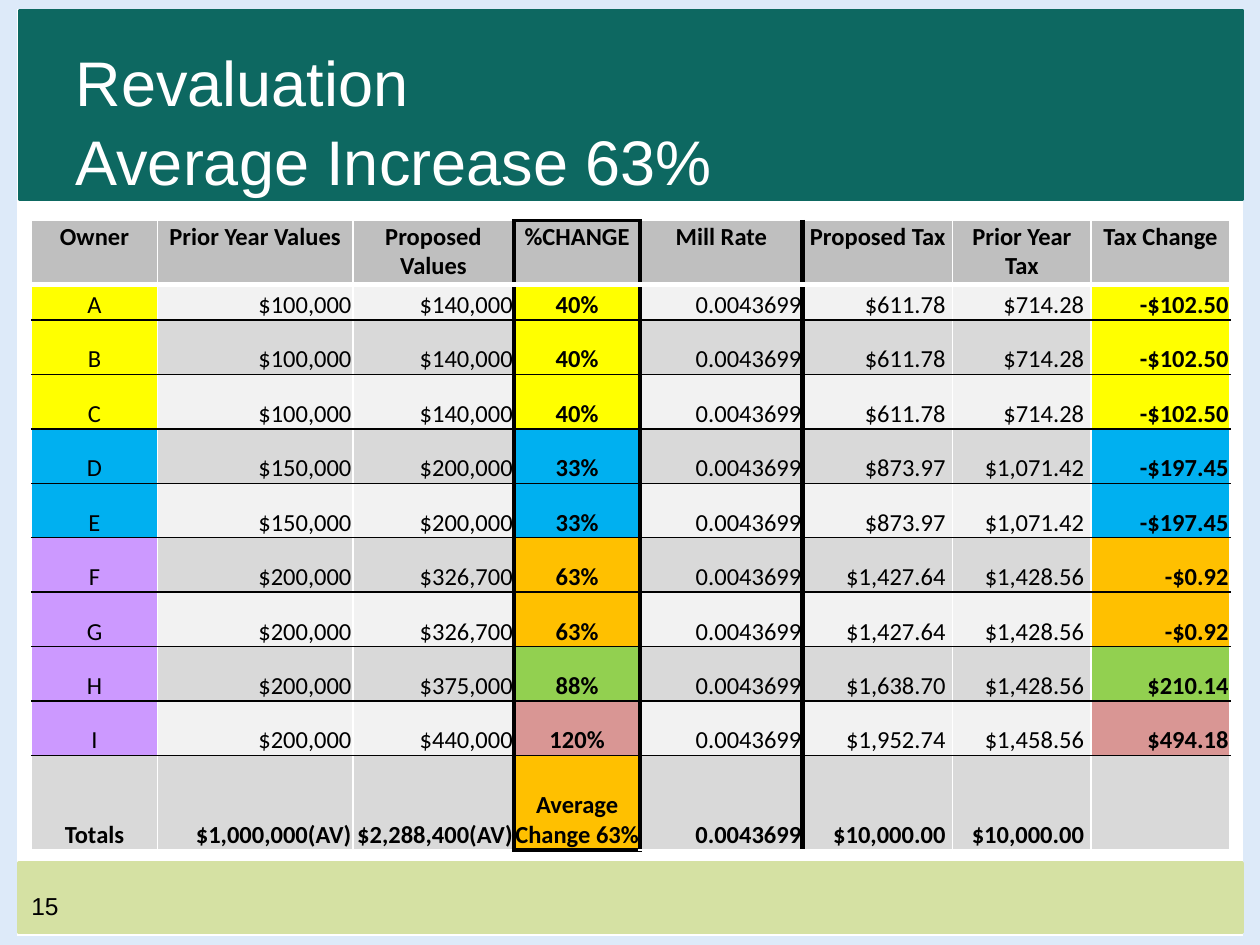
import pptx
import pptx.util
import pptx.dml.color
import pptx.enum.shapes
import pptx.enum.text
from lxml import etree

Pt = pptx.util.Pt
Align = pptx.enum.text.PP_ALIGN
Anchor = pptx.enum.text.MSO_ANCHOR

HUES = {
    "frame": "DDEAF9", "foot": "D5E1A3", "banner": "0D6861",
    "white": "FFFFFF", "black": "000000", "head": "BFBFBF",
    "light": "F2F2F2", "dark": "D9D9D9", "yellow": "FFFF00",
    "blue": "00B0F0", "purple": "CC99FF", "orange": "FFC000",
    "green": "92D050", "rose": "D99694",
}
TITLE = "Revaluation\vAverage Increase 63%"
PAGE = "15"
BANDS = [
    ("frame", 0, 0, 720, 4.3),
    ("frame", 0.4, 4, 8.6, 533.5),
    ("frame", 711, 2, 8.6, 533.5),
    ("frame", 0, 535.7, 720, 4.3),
    ("foot", 10.8, 493.2, 699.1, 39.6),
    ("banner", 11.5, 6, 698.4, 108),
]
HEADS = ["Owner", "Prior Year Values", "Proposed Values", "%CHANGE",
         "Mill Rate", "Proposed Tax", "Prior Year Tax", "Tax Change"]
RATE = "0.0043699"
OWNERS = [
    ("A", "$100,000", "$140,000", "40%", RATE, "$611.78", "$714.28", "-$102.50"),
    ("B", "$100,000", "$140,000", "40%", RATE, "$611.78", "$714.28", "-$102.50"),
    ("C", "$100,000", "$140,000", "40%", RATE, "$611.78", "$714.28", "-$102.50"),
    ("D", "$150,000", "$200,000", "33%", RATE, "$873.97", "$1,071.42", "-$197.45"),
    ("E", "$150,000", "$200,000", "33%", RATE, "$873.97", "$1,071.42", "-$197.45"),
    ("F", "$200,000", "$326,700", "63%", RATE, "$1,427.64", "$1,428.56", "-$0.92"),
    ("G", "$200,000", "$326,700", "63%", RATE, "$1,427.64", "$1,428.56", "-$0.92"),
    ("H", "$200,000", "$375,000", "88%", RATE, "$1,638.70", "$1,428.56", "$210.14"),
    ("I", "$200,000", "$440,000", "120%", RATE, "$1,952.74", "$1,458.56", "$494.18"),
]
TOTALS = ("Totals", "$1,000,000(AV)", "$2,288,400(AV)", "Average Change 63%",
          RATE, "$10,000.00", "$10,000.00", "")
ROWS = [HEADS, *OWNERS, TOTALS]
WIDTHS = [72, 111.6, 92.2, 72, 92.9, 85.7, 79.2, 79.2]
HEIGHTS = [36.7, 20.2] + [31.1] * 8 + [54]
CLASSES = {"A": "yellow", "B": "yellow", "C": "yellow", "D": "blue", "E": "blue"}
CHANGES = {"40%": "yellow", "33%": "blue", "63%": "orange", "88%": "green", "120%": "rose"}
OWNER, CHANGE, DIFF = 0, 3, 7
TAXES = (5, 6)
THICK = (3, 4, 5)
LAST = len(ROWS) - 1


def color(name):
    return pptx.dml.color.RGBColor.from_string(HUES[name])


def style(frame, font, size, hue, bold=False):
    for para in frame.paragraphs:
        for run in para.runs:
            run.font.name = font
            run.font.size = Pt(size)
            run.font.bold = bold
            run.font.color.rgb = color(hue)


def add(parent, tag, **attrs):
    return etree.SubElement(parent, pptx.oxml.ns.qn(tag), attrs)


def tint(row, col):
    if row == 0:
        return "head"
    data = ROWS[row]
    if row == LAST:
        return "orange" if col == CHANGE else "dark"
    if col == OWNER:
        return CLASSES.get(data[OWNER], "purple")
    if col in (CHANGE, DIFF):
        return CHANGES[data[CHANGE]]
    return "light" if row % 2 else "dark"


def upright(edge):
    return ("black", 3) if edge in THICK else ("white", 1)


def level(edge, col):
    if edge == 0:
        return ("black", 2.25) if col == CHANGE else ("white", 1)
    if edge == 1:
        return ("white", 3)
    if edge > LAST:
        return ("black", 3) if col == CHANGE else ("white", 1)
    return ("black", 1)


def border(cell, row, col):
    props = cell._tc.get_or_add_tcPr()
    sides = [("a:lnL", upright(col)), ("a:lnR", upright(col + 1)),
             ("a:lnT", level(row, col)), ("a:lnB", level(row + 1, col))]
    for tag, (hue, width) in sides:
        line = add(props, tag, w=str(int(Pt(width))))
        add(add(line, "a:solidFill"), "a:srgbClr", val=HUES[hue])


def fill_cell(cell, row, col, text):
    border(cell, row, col)
    cell.fill.solid()
    cell.fill.fore_color.rgb = color(tint(row, col))
    cell.margin_left = cell.margin_top = Pt(0.7)
    cell.margin_right = Pt(4 if row and col in TAXES else 0.7)
    cell.margin_bottom = 0
    cell.vertical_anchor = Anchor.BOTTOM if row else Anchor.TOP
    cell.text_frame.text = text
    middle = row == 0 or col in (OWNER, CHANGE)
    cell.text_frame.paragraphs[0].alignment = Align.CENTER if middle else Align.RIGHT
    style(cell.text_frame, "Calibri", 14, "black", row in (0, LAST) or col in (CHANGE, DIFF))


def add_title(slide):
    title = slide.shapes.title
    title.left, title.top, title.width, title.height = Pt(36), Pt(23), Pt(534.2), Pt(90)
    frame = title.text_frame
    frame.text = TITLE
    frame.word_wrap = True
    frame.vertical_anchor = Anchor.MIDDLE
    frame.paragraphs[0].alignment = Align.LEFT
    frame.paragraphs[0].line_spacing = 1.05
    style(frame, "Arial", 36, "white")
    for run in frame.paragraphs[0].runs:
        props = run.font._element
        glow = etree.Element(pptx.oxml.ns.qn("a:effectLst"))
        props.insert(1, glow)
        shade = add(glow, "a:outerShdw", blurRad="38100", dist="38100", dir="2700000", algn="tl")
        add(add(shade, "a:srgbClr", val=HUES["black"]), "a:alpha", val="43000")
    title.element.getparent().append(title.element)


def main():
    deck = pptx.Presentation()
    deck.slide_width, deck.slide_height = Pt(720), Pt(540)
    slide = deck.slides.add_slide(deck.slide_layouts[5])
    for hue, *box in BANDS:
        band = slide.shapes.add_shape(pptx.enum.shapes.MSO_SHAPE.RECTANGLE, *map(Pt, box))
        band.shadow.inherit = False
        band.fill.solid()
        band.fill.fore_color.rgb = band.line.color.rgb = color(hue)
        band.line.width = Pt(2)

    page = slide.shapes.add_textbox(Pt(10.8), Pt(505.4), Pt(167.8), Pt(28.8)).text_frame
    page.text = PAGE
    page.word_wrap = True
    style(page, "Arial", 14, "black")
    add_title(slide)

    table = slide.shapes.add_table(len(ROWS), len(HEADS), Pt(18), Pt(126),
                                   Pt(sum(WIDTHS)), Pt(sum(HEIGHTS))).table
    table.first_row = table.horz_banding = False
    for col, width in enumerate(WIDTHS):
        table.columns[col].width = Pt(width)
    for row, data in enumerate(ROWS):
        table.rows[row].height = Pt(HEIGHTS[row])
        for col, text in enumerate(data):
            fill_cell(table.cell(row, col), row, col, text)
    deck.save("out.pptx")


if __name__ == "__main__":
    main()
